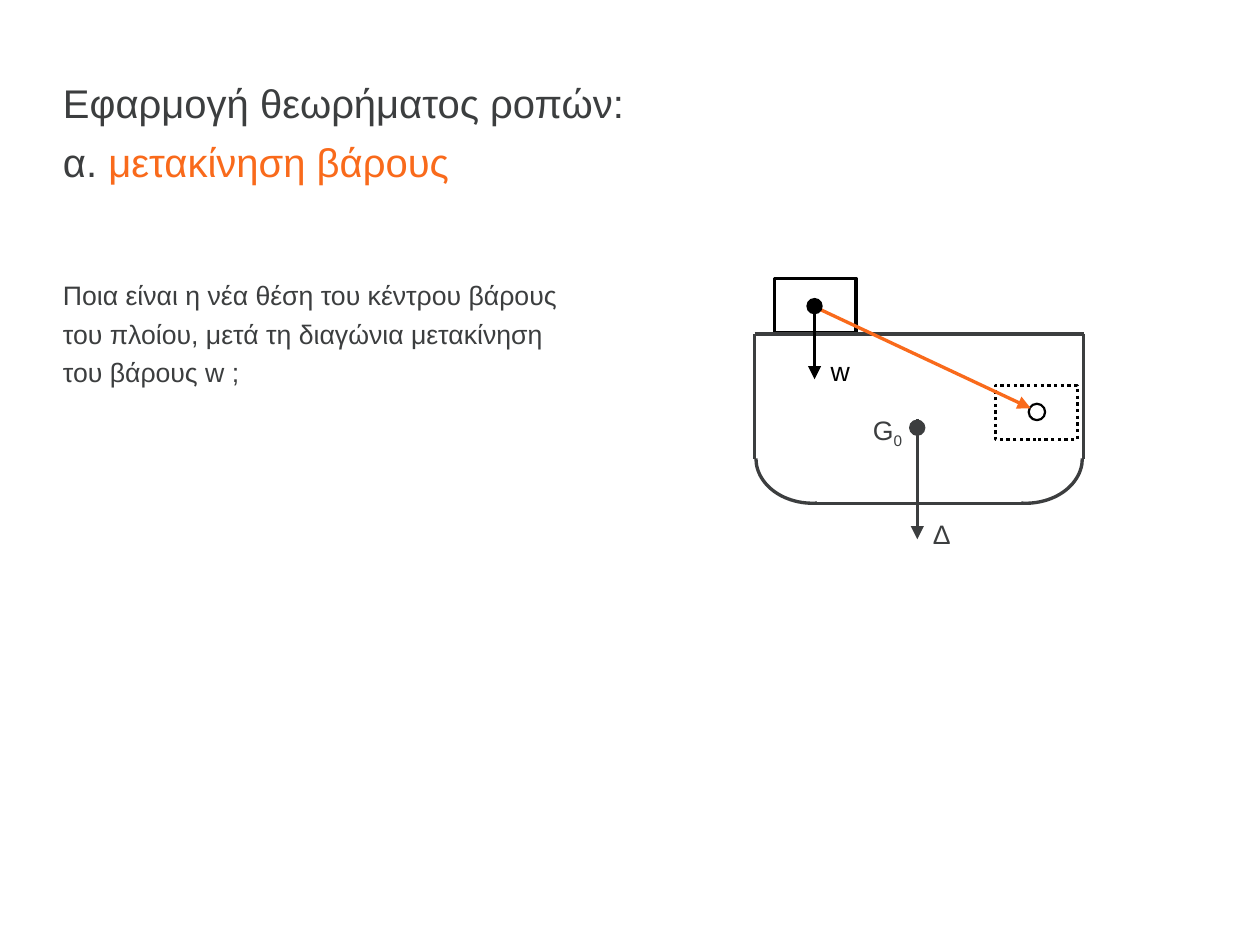
import pptx
import pptx.util
import pptx.dml.color
import pptx.enum.dml
import pptx.enum.shapes
import pptx.enum.text
import pptx.oxml.ns
from lxml import etree

Cm = pptx.util.Cm
Pt = pptx.util.Pt
Kind = pptx.enum.shapes.MSO_SHAPE
Align = pptx.enum.text.PP_ALIGN
Anchor = pptx.enum.text.MSO_ANCHOR
Fit = pptx.enum.text.MSO_AUTO_SIZE

INK = "3C3E3F"
BLACK = "000000"
WHITE = "FFFFFF"
ORANGE = "F96A1B"


def paint(form, color):
    form.solid()
    form.fore_color.rgb = pptx.dml.color.RGBColor.from_string(color)


def write(frame, *parts, size=12, color=INK, align=Align.CENTER, gap=1.2,
          anchor=Anchor.TOP, pad=(0, 0), fit=Fit.SHAPE_TO_FIT_TEXT):
    frame.word_wrap = True
    frame.auto_size = fit
    frame.vertical_anchor = anchor
    frame.margin_left = frame.margin_right = Cm(pad[0])
    frame.margin_top = frame.margin_bottom = Cm(pad[1])
    para = frame.paragraphs[0]
    para.alignment = align
    para.line_spacing = gap
    for part in parts:
        if part == "\n":
            para.add_line_break()
            continue
        words, look = part if isinstance(part, tuple) else (part, {})
        run = para.add_run()
        run.text = words
        run.font.name = "Arial"
        run.font.size = Pt(size)
        paint(run.font.fill, look.get("color", color))
        if "base" in look:
            run.font._element.set("baseline", str(look["base"]))


class Board:
    def __init__(self, deck):
        self.slide = deck.slides.add_slide(deck.slide_layouts[5])
        self.shapes = self.slide.shapes
        self.width = 1.5

    def title(self, box, *parts, **look):
        head = self.shapes.title
        head.left, head.top, head.width, head.height = map(Cm, box)
        write(head.text_frame, *parts, **look)

    def text(self, box, *parts, **look):
        note = self.shapes.add_textbox(*map(Cm, box))
        write(note.text_frame, *parts, **look)

    def shape(self, kind, box, fill=None, line=None, width=None):
        item = self.shapes.add_shape(kind, *map(Cm, box))
        item.shadow.inherit = False
        if fill:
            paint(item.fill, fill)
        else:
            item.fill.background()
        if line:
            paint(item.line.fill, line)
            item.line.width = Pt(width or self.width)
        else:
            item.line.fill.background()
        return item

    def dot(self, x, y, **look):
        size = 0.26
        return self.shape(Kind.OVAL, (x - size / 2, y - size / 2, size, size), **look)

    def load(self, x, y, **look):
        return self.shape(Kind.RECTANGLE, (x - 0.65, y - 0.43, 1.3, 0.86),
                          line=BLACK, **look)

    def bilge(self, x, turn, flip=False):
        item = self.shape(Kind.ARC, (x - 0.71, 6.38, 1.42, 1.8), line=INK)
        item.adjustments[0] = 162
        item.adjustments[1] = 3.264
        item.rotation = turn
        if flip:
            item._element.spPr.xfrm.set("flipH", "1")

    def line(self, ends, color=INK, arrow=False):
        link = self.shapes.add_connector(
            pptx.enum.shapes.MSO_CONNECTOR.STRAIGHT, *map(Cm, ends))
        paint(link.line.fill, color)
        link.line.width = Pt(self.width)
        name = pptx.oxml.ns.qn
        if arrow:
            tip = etree.SubElement(link.line._get_or_add_ln(), name("a:tailEnd"))
            tip.set("type", "triangle")
        etree.SubElement(link._element.spPr, name("a:effectLst"))


def main():
    deck = pptx.Presentation()
    deck.slide_width = Cm(20)
    deck.slide_height = Cm(15)
    board = Board(deck)

    board.title((1, 1, 18, 2), "Εφαρμογή θεωρήματος ροπών:", "\n", "α. ",
                ("μετακίνηση βάρους", {"color": ORANGE}), size=18, gap=1.25,
                align=Align.LEFT, anchor=Anchor.MIDDLE, fit=Fit.NONE)
    board.text((1, 4.2, 8.2, 2.1),
               "Ποια είναι η νέα θέση του κέντρου βάρους του πλοίου, "
               "μετά τη διαγώνια μετακίνηση του βάρους w ;",
               align=Align.LEFT, pad=(0, 0.13))

    board.dot(14.56, 6.79, fill=INK)
    board.text((13.67, 6.45, 0.84, 0.56), "G", ("0", {"base": -25000}))

    goal = board.load(16.45, 6.55)
    goal.line.dash_style = pptx.enum.dml.MSO_LINE.ROUND_DOT
    board.dot(16.46, 6.54, fill=WHITE, line=BLACK, width=1)
    board.load(12.94, 4.85, fill=WHITE)

    left, right, top, side, keel = 11.98, 17.2, 5.3, 7.28, 7.99
    for ends in ((left, top, right, top), (left, top, left, side),
                 (right, top, right, side), (12.95, keel, 16.36, keel)):
        board.line(ends)
    board.bilge(16.28, 90)
    board.bilge(12.9, 270, flip=True)

    board.line((12.95, 4.88, 16.36, 6.48), color=ORANGE, arrow=True)
    board.dot(12.93, 4.86, fill=BLACK)
    board.line((12.93, 4.9, 12.93, 6.02), color=BLACK, arrow=True)
    board.text((13.11, 5.56, 0.46, 0.56), "w", color=BLACK, anchor=Anchor.MIDDLE)
    board.line((14.56, 6.65, 14.56, 8.56), arrow=True)
    board.text((14.53, 8.05, 0.84, 0.76), "Δ", anchor=Anchor.MIDDLE, pad=(0.1, 0.1))

    deck.save("out.pptx")


if __name__ == "__main__":
    main()
